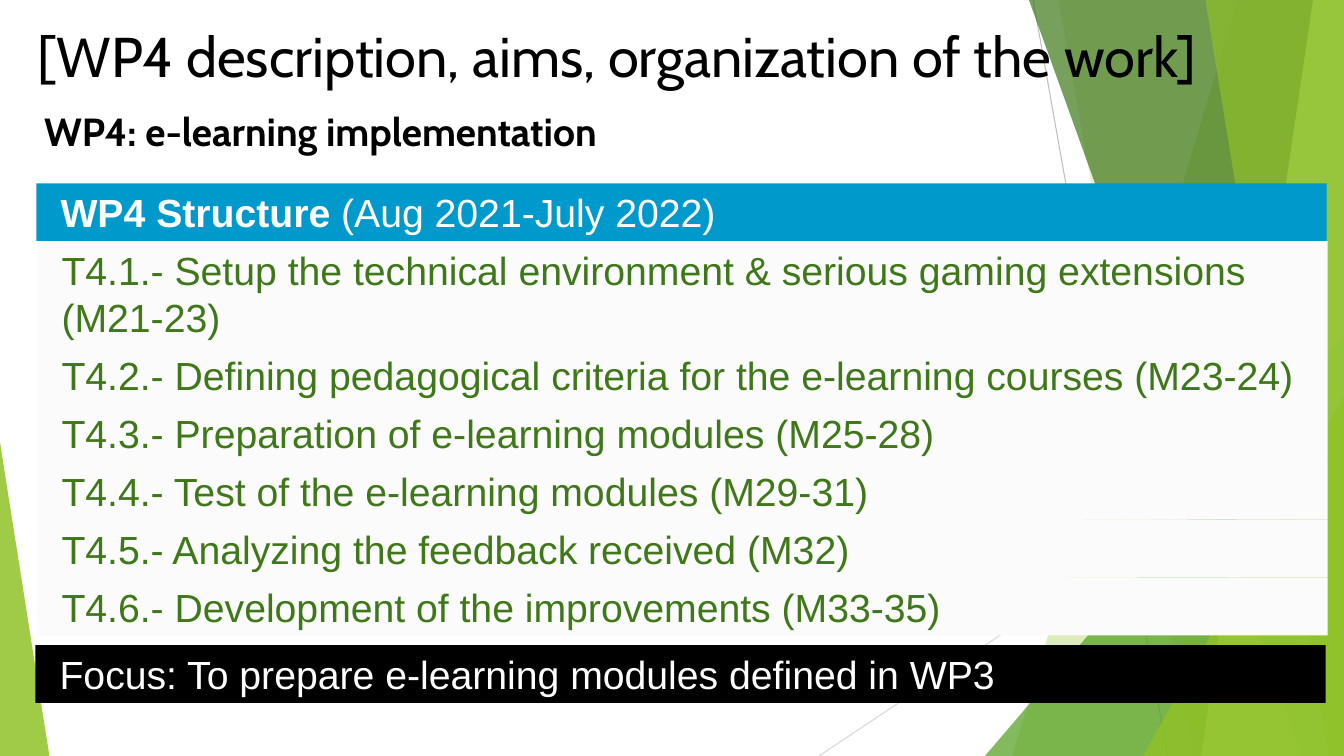
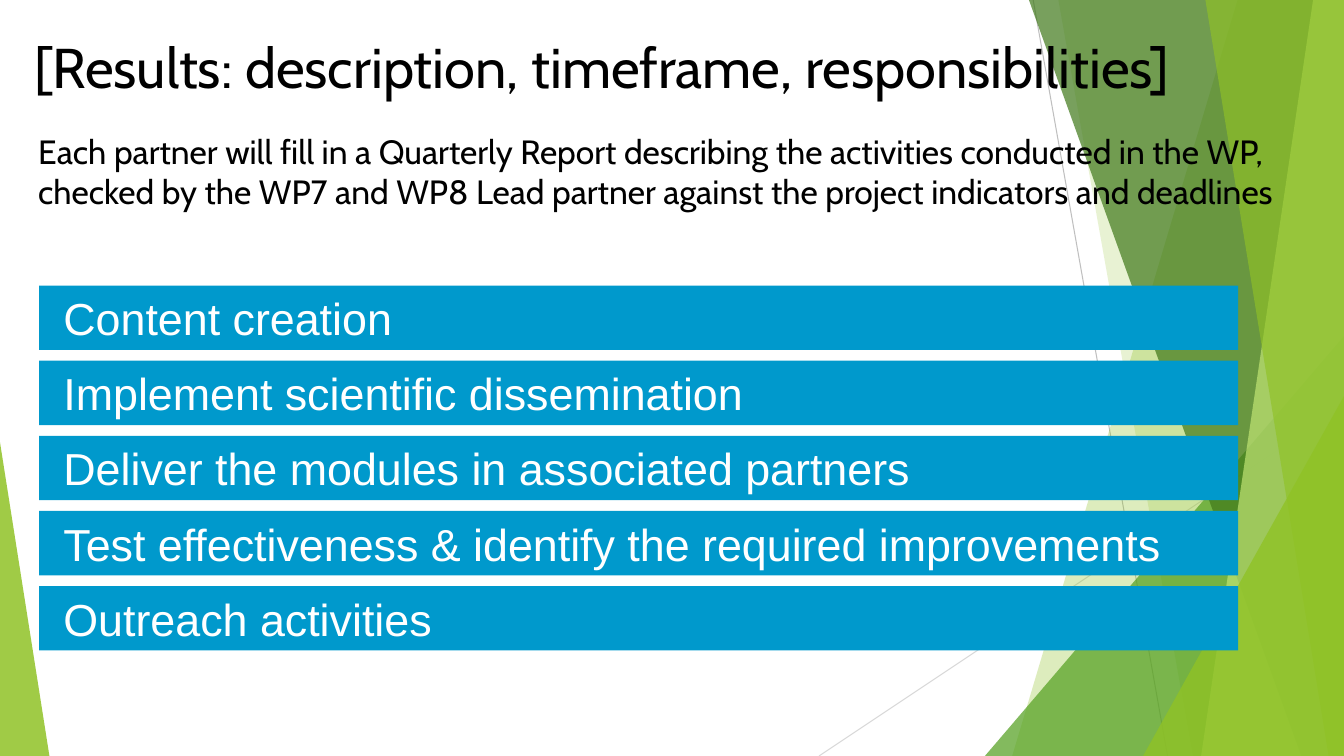
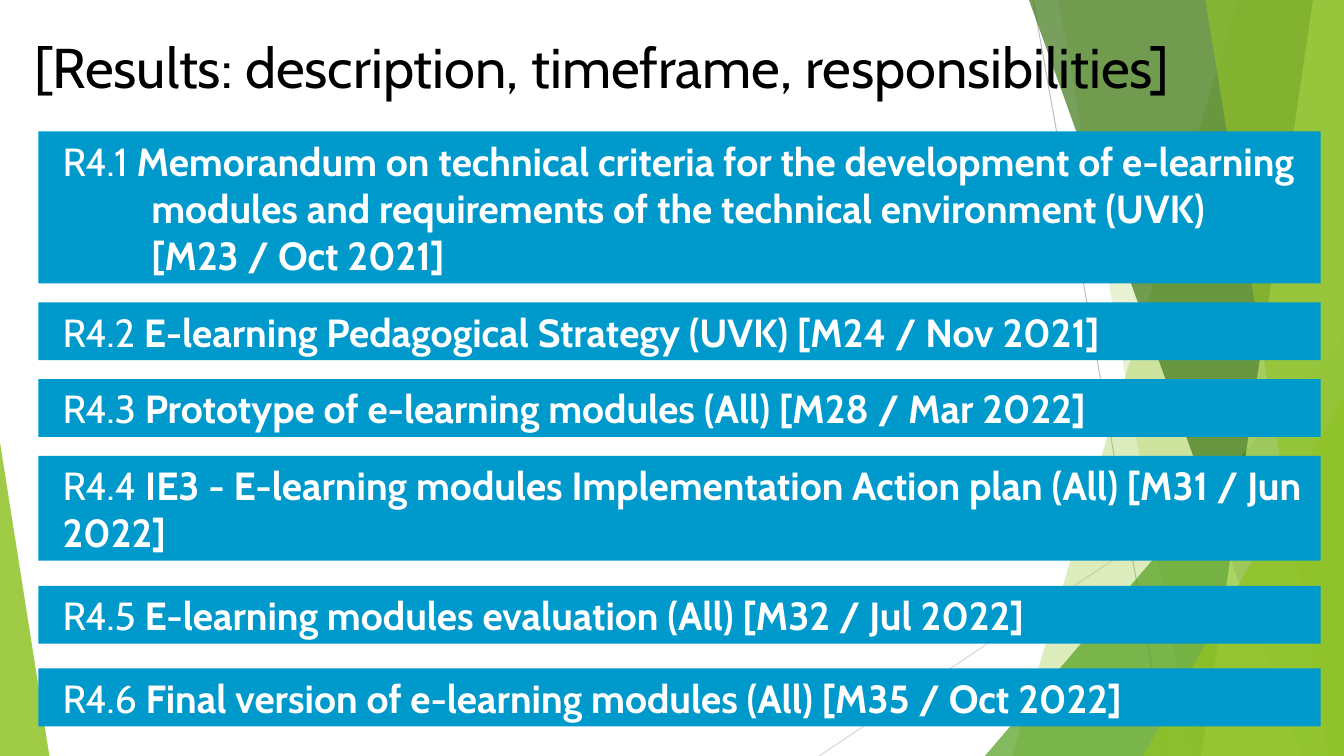
from lxml.etree import SubElement
from pptx import Presentation
from pptx.dml.color import RGBColor
from pptx.enum.shapes import MSO_CONNECTOR, MSO_SHAPE
from pptx.enum.text import MSO_ANCHOR, PP_ALIGN
from pptx.oxml.ns import qn
from pptx.util import Pt

WIDTH, HEIGHT = 960, 540
BLACK, WHITE, PALE = "000000", "FFFFFF", "FBFBFB"
BLUE, DARK_GREEN, GREEN, LIME, LIGHT_LIME = "0099CC", "3F7819", "54A021", "90C226", "C0E474"
ROW, TWO_ROWS, THREE_ROWS = 41.3, 75, 108.7


def rgb(color):
    return RGBColor.from_string(color)


def set_all(target, values):
    for name, value in values.items():
        setattr(target, name, value)


class Deck:
    """Holds the shared style and the slide being built."""

    def __init__(self):
        self.prs = Presentation()
        set_all(self.prs, {"slide_width": Pt(WIDTH), "slide_height": Pt(HEIGHT)})
        self.shapes = None

    def slide(self, title, x, y):
        s = self.prs.slides.add_slide(self.prs.slide_layouts[6])
        self.shapes = s.shapes
        self.backdrop()
        self.text(title, x, y, 926, 58, 40)

    def backdrop(self):
        self.line(738, 0, 834, 540, "BFBFBF")
        self.line(960, 290, 585, 540, "D9D9D9")
        self.edge_band(884, 723, LIME, 30)
        self.edge_band(756, 852, LIME, 20)
        self.triangle(703.5, 240, 256.5, 1, GREEN, 72)
        self.edge_band(735, 929.5, DARK_GREEN, 70)
        self.edge_band(938, 858, LIGHT_LIME, 70)
        self.edge_band(861, 949, LIME, 65)
        self.triangle(816.5, 283, 143.5, 1, LIME, 80)
        self.triangle(0, 316, 35.3, 0, LIME, 85)

    def line(self, x1, y1, x2, y2, color):
        c = self.shapes.add_connector(MSO_CONNECTOR.STRAIGHT, Pt(x1), Pt(y1), Pt(x2), Pt(y2))
        c.line.color.rgb = rgb(color)
        c.line.width = Pt(0.75)
        SubElement(c._element.spPr, qn("a:effectLst"))

    def paint(self, sp, color, opacity=100):
        sp.shadow.inherit = False
        sp.fill.solid()
        sp.fill.fore_color.rgb = rgb(color)
        sp.line.fill.background()
        if opacity < 100:
            clr = sp._element.spPr.find(qn("a:solidFill"))[0]
            SubElement(clr, qn("a:alpha"), val=str(opacity * 1000))

    def edge_band(self, top_x, bottom_x, color, opacity):
        """Fills from a slanted left side to the right edge of the slide."""
        builder = self.shapes.build_freeform(Pt(top_x), 0)
        corners = [(WIDTH, 0), (WIDTH, HEIGHT), (bottom_x, HEIGHT)]
        builder.add_line_segments([(Pt(x), Pt(y)) for x, y in corners])
        self.paint(builder.convert_to_shape(), color, opacity)

    def triangle(self, x, y, w, apex, color, opacity):
        """Stands on the bottom edge of the slide; apex runs from 0 (left) to 1."""
        sp = self.shapes.add_shape(MSO_SHAPE.ISOSCELES_TRIANGLE,
                                   Pt(x), Pt(y), Pt(w), Pt(HEIGHT - y))
        sp.adjustments[0] = apex
        self.paint(sp, color, opacity)

    def add_runs(self, tf, runs, size, font, color):
        """Adds (text, bold) runs to the first paragraph."""
        tf.word_wrap = True
        p = tf.paragraphs[0]
        p.alignment = PP_ALIGN.LEFT
        for text, bold in runs:
            r = p.add_run()
            r.text = text
            set_all(r.font, {"size": Pt(size), "name": font, "bold": bold})
            r.font.color.rgb = rgb(color)
        return p

    def text(self, text, x, y, w, h, size, bold=False):
        sp = self.shapes.add_textbox(Pt(x), Pt(y), Pt(w), Pt(h))
        self.add_runs(sp.text_frame, [(text, bold)], size, "Cabin", BLACK)

    def bar(self, runs, x, y, w, h, fill=BLUE, color=WHITE, size=28, font="Arial", hang=0):
        sp = self.shapes.add_shape(MSO_SHAPE.RECTANGLE, Pt(x), Pt(y), Pt(w), Pt(h))
        self.paint(sp, fill)
        tf = sp.text_frame
        set_all(tf, {"margin_left": Pt(17.3), "margin_right": Pt(7.2), "margin_top": Pt(3.6),
                     "margin_bottom": Pt(3.6), "vertical_anchor": MSO_ANCHOR.MIDDLE})
        p = self.add_runs(tf, runs, size, font, color)
        if hang:
            pPr = p._p.get_or_add_pPr()
            pPr.set("marL", str(int(Pt(hang))))
            pPr.set("indent", str(-int(Pt(hang))))


def structure_slide(deck):
    deck.slide("[WP4 description, aims, organization of the work]", 19.4, 12.2)
    deck.text("WP4: e-learning implementation", 24.5, 73.4, 444, 41, 28, bold=True)
    x, y, w = 26, 131, 921.6
    deck.bar([("WP4 Structure ", True), ("(Aug 2021-July 2022)", False)], x, y, w, ROW)
    y += ROW
    tasks = [
        ("Setup the technical environment & serious gaming extensions (M21-23)", TWO_ROWS),
        ("Defining pedagogical criteria for the e-learning courses (M23-24)", ROW),
        ("Preparation of e-learning modules (M25-28)", ROW),
        ("Test of the e-learning modules (M29-31)", ROW),
        ("Analyzing the feedback received (M32)", ROW),
        ("Development of the improvements (M33-35)", ROW),
    ]
    for number, (task, h) in enumerate(tasks, 1):
        deck.bar([(f"T4.{number}.- {task}", False)], x + 0.7, y, w, h, PALE, DARK_GREEN)
        y += h
    deck.bar([("Focus: To prepare e-learning modules defined in WP3", False)],
             x - 0.7, y + 7, w, ROW, BLACK)


RESULTS_TITLE = "[Results: description, timeframe, responsibilities]"


def activities_slide(deck):
    deck.slide(RESULTS_TITLE, 17.3, 19.4)
    activities = ["Content creation", "Implement scientific dissemination",
                  "Deliver the modules in associated partners",
                  "Test effectiveness & identify the required improvements",
                  "Outreach activities"]
    for i, activity in enumerate(activities):
        deck.bar([(activity, False)], 28, 204 + 53.65 * i, 856.4, 46, size=32)
    deck.text("Each partner will fill in a Quarterly Report describing the activities conducted "
              "in the WP, checked by the WP7 and WP8 Lead partner against the project "
              "indicators and deadlines", 20.2, 90, 906.5, 94, 24)


def results_slide(deck):
    deck.slide(RESULTS_TITLE, 17.3, 19.4)
    wide, narrow = 17.8, 13.5
    results = [
        ("Memorandum on technical criteria for the development of e-learning modules and "
         "requirements of the technical environment (UVK) [M23 / Oct 2021]",
         THREE_ROWS, narrow, 63.4),
        ("E-learning Pedagogical Strategy (UVK) [M24 / Nov 2021]", ROW, narrow, 0),
        ("Prototype of e-learning modules (All) [M28 / Mar 2022]", ROW, narrow, 0),
        ("IE3 - E-learning modules Implementation Action plan (All) [M31 / Jun 2022]",
         TWO_ROWS, wide, 0),
        ("E-learning modules evaluation (All) [M32 / Jul 2022]", ROW, wide, 0),
        ("Final version of e-learning modules (All) [M35 / Oct 2022]", ROW, wide, 0),
    ]
    y = 93.8
    for number, (result, h, gap, hang) in enumerate(results, 1):
        deck.bar([(f"R4.{number} ", False), (result, True)], 27.4, y, 916, h,
                 font="Cabin", hang=hang)
        y += h + gap


def main():
    deck = Deck()
    structure_slide(deck)
    activities_slide(deck)
    results_slide(deck)
    deck.prs.save("out.pptx")


if __name__ == "__main__":
    main()
